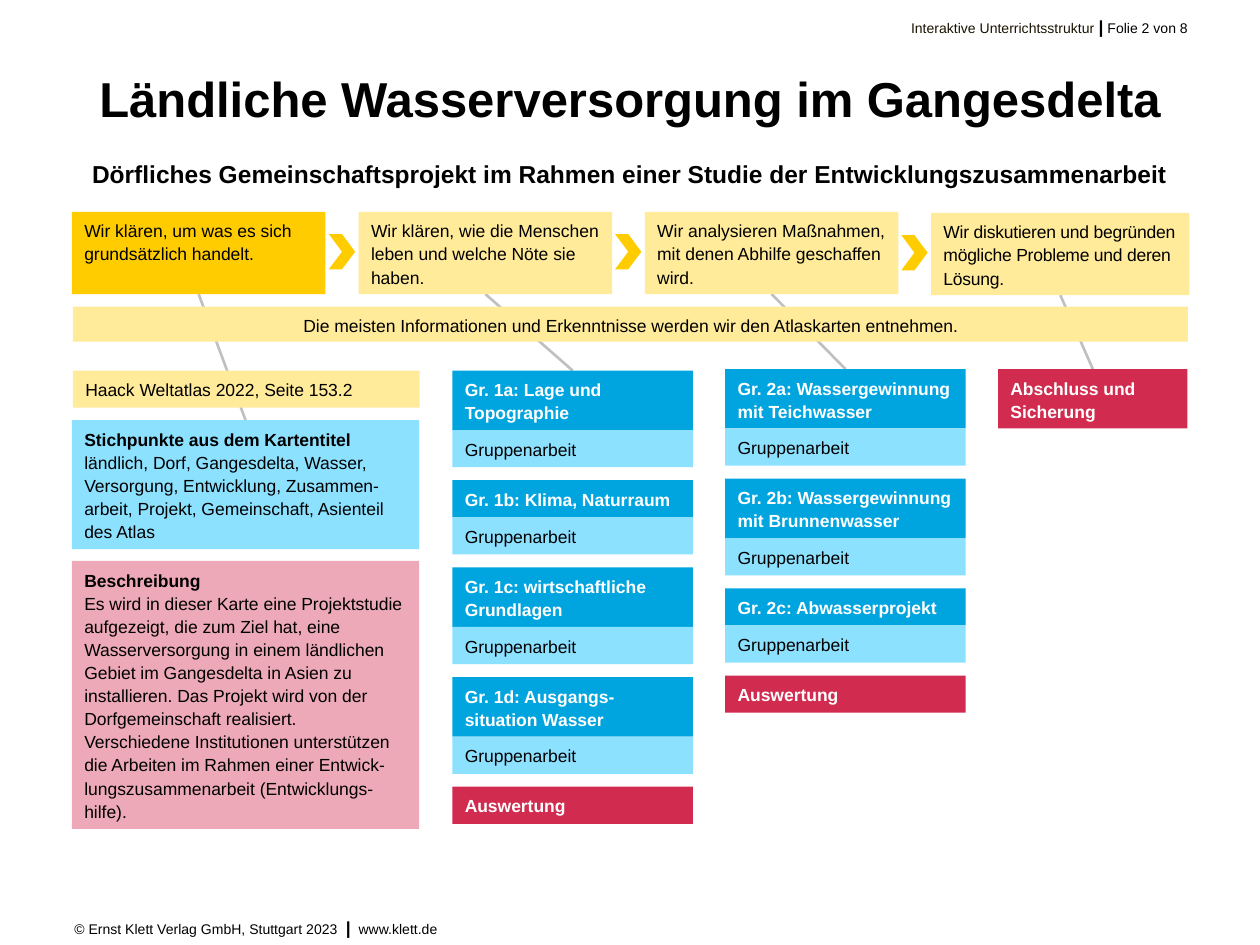
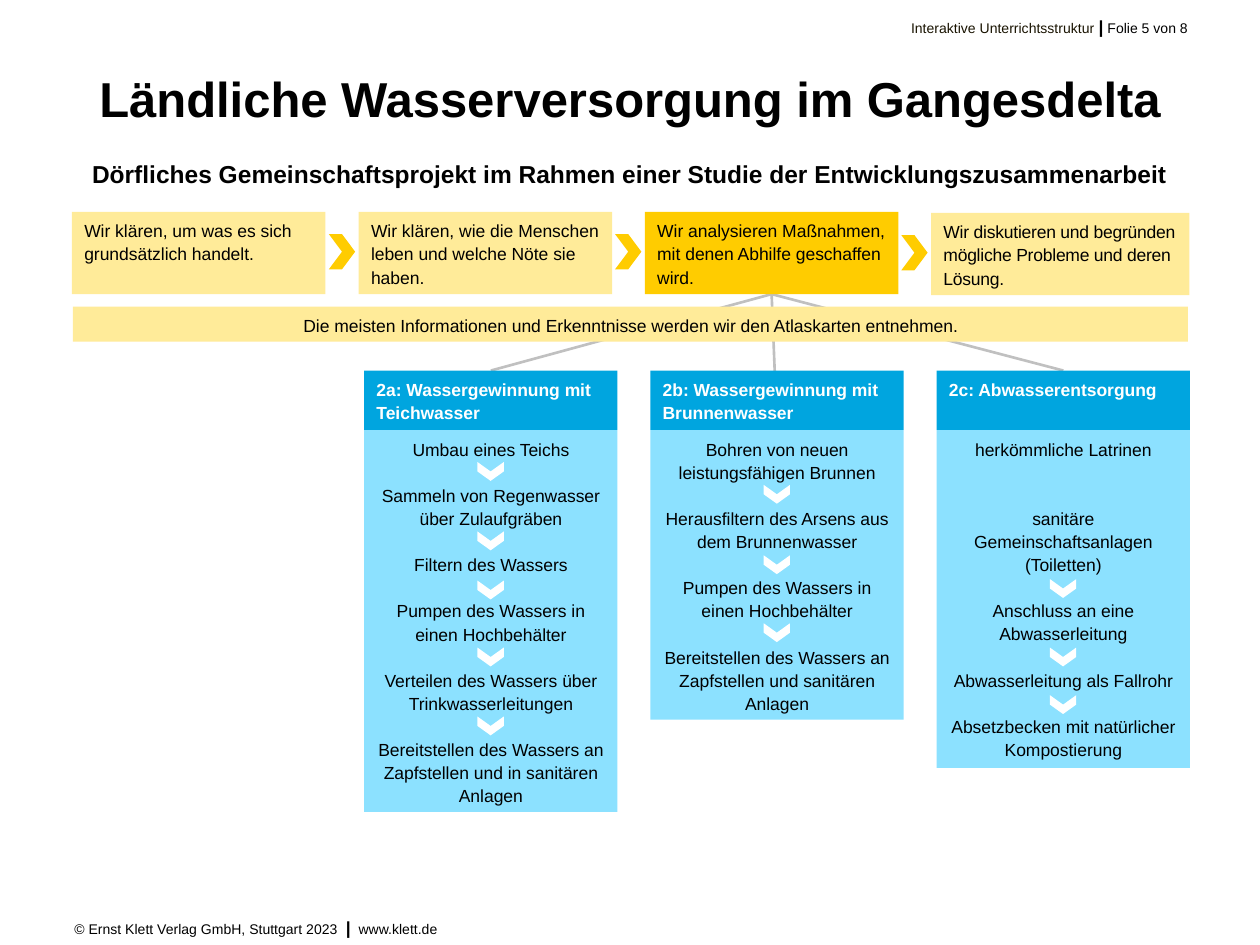
from pptx import Presentation
from pptx import util as u
from pptx.dml.color import RGBColor
from pptx.enum import shapes, text
from pptx.oxml.ns import qn
from lxml import etree

Cm, Pt = u.Cm, u.Pt
SH, AL, AN = shapes.MSO_SHAPE, text.PP_ALIGN, text.MSO_ANCHOR
YELLOW, CREAM, BLUE, SKY = "FFCC00", "FFEB99", "00A5DF", "8CE1FF"
RED, PINK, GREY, WHITE, BLACK = "D12B4F", "EDA9B8", "C0C0C0", "FFFFFF", "000000"
BOLD = {"bold": True}
HEAD = {"bold": True, "color": WHITE}
SMALL = {"size": Pt(8)}
BAR = {"size": Pt(10), "bold": True}
WIDE_SPACE = {"size": Pt(8), "spc": 220}
LINE = 13.2


def write(sp, paras, al=AL.LEFT, ls=1.1, ins=(0.25, 0.13), anchor=AN.TOP, gaps=()):
    tf = sp.text_frame
    frame = {"word_wrap": True, "auto_size": text.MSO_AUTO_SIZE.NONE, "vertical_anchor": anchor,
             "margin_left": Cm(ins[0]), "margin_right": Cm(ins[0]),
             "margin_top": Cm(ins[1]), "margin_bottom": Cm(ins[1])}
    for key, value in frame.items():
        setattr(tf, key, value)
    for i, runs in enumerate(paras):
        p = tf.add_paragraph() if i else tf.paragraphs[0]
        pPr = p._p.get_or_add_pPr()
        pPr.set("marL", "0")
        pPr.set("indent", "0")
        etree.SubElement(pPr, qn("a:buNone"))
        p.alignment, p.line_spacing = al, ls
        p.space_before = Pt(gaps[i] * LINE if gaps else 0)
        for words, fmt in runs:
            r = p.add_run()
            r.text = words
            fmt = {"name": "Arial", "size": Pt(10), "bold": False, "color": BLACK, **fmt}
            r.font.color.rgb = RGBColor.from_string(fmt.pop("color"))
            if "spc" in fmt:
                r._r.get_or_add_rPr().set("spc", str(fmt.pop("spc")))
            for key, value in fmt.items():
                setattr(r.font, key, value)


def box(s, x, y, w, h, fill, paras=(), kind=SH.RECTANGLE, **layout):
    sp = s.shapes.add_shape(kind, Cm(x), Cm(y), Cm(w), Cm(h))
    sp.shadow.inherit = False
    sp.fill.solid()
    sp.fill.fore_color.rgb = RGBColor.from_string(fill)
    sp.line.fill.background()
    if paras:
        write(sp, paras, **layout)
    return sp


prs = Presentation()
prs.slide_width, prs.slide_height = Cm(25.4), Cm(19.05)

steps = [
    ("Wir klären, um was es sich grundsätzlich handelt.", 1.45, 4.27, 5.11, {}),
    ("Wir klären, wie die Menschen leben und welche Nöte sie haben.", 7.23, 4.27, 5.11, {}),
    ("Wir analysieren Maßnahmen, mit denen Abhilfe geschaffen wird.", 13, 4.27, 5.11, {}),
    ("Wir diskutieren und begründen mögliche Probleme und deren Lösung.", 18.77, 4.29, 5.21,
     {"spc": -10}),
]

slides = []
for number, active in [(2, 0), (5, 2)]:
    s = prs.slides.add_slide(prs.slide_layouts[1])
    title, subtitle = s.shapes.title, s.placeholders[1]
    header = s.shapes.add_textbox(Cm(7.7), Cm(0.28), Cm(16.25), Cm(0.51))
    footer = s.shapes.add_textbox(Cm(1.5), Cm(18.44), Cm(19.25), Cm(0.51))
    write(header, [[("Interaktive Unterrichtsstruktur ", {"size": Pt(8), "color": "191300"}),
                    ("|", BAR), (f" Folie {number} von 8", SMALL)]],
          AL.RIGHT, 1.0, (0, 0), AN.MIDDLE)
    write(footer, [[("© Ernst Klett Verlag GmbH, Stuttgart 2023", SMALL), (" ", WIDE_SPACE),
                    ("|", BAR), (" ", WIDE_SPACE), ("www.klett.de", SMALL)]],
          AL.LEFT, 1.0, (0, 0), AN.MIDDLE)
    for sp, y, h in [(title, 1.52, 1.5), (subtitle, 3.02, 0.99)]:
        sp.left, sp.top, sp.width, sp.height = Cm(1.45), Cm(y), Cm(22.5), Cm(h)
    write(title, [[("Ländliche Wasserversorgung im Gangesdelta", {"size": Pt(28), "bold": True})]],
          AL.CENTER, 0.9, (0, 0))
    write(subtitle, [[("Dörfliches Gemeinschaftsprojekt im Rahmen einer Studie der "
                       "Entwicklungszusammenarbeit", {"size": Pt(14), "bold": True})]],
          AL.CENTER, 1.1, (0, 0.13))
    step_boxes = []
    for i, (words, x, y, w, fmt) in enumerate(steps):
        fill = YELLOW if i == active else CREAM
        step_boxes.append(box(s, x, y, w, 1.66, fill, [[(words, fmt)]]))
        if i:
            box(s, x - 0.6, y + 0.45, 0.53, 0.71, YELLOW, kind=SH.CHEVRON)
    box(s, 1.47, 6.18, 22.48, 0.71, CREAM,
        [[("Die meisten Informationen und Erkenntnisse werden wir den Atlaskarten entnehmen.", {})]],
        al=AL.CENTER)
    slides.append((s, step_boxes))

(overview, overview_steps), (measures, measure_steps) = slides
links = []

box(overview, 1.47, 7.47, 6.99, 0.75, CREAM, [[("Haack Weltatlas 2022, Seite 153.2", {})]])
keywords = box(overview, 1.45, 8.47, 7, 2.6, SKY, [
    [("Stichpunkte aus dem Kartentitel", BOLD)],
    [("ländlich, Dorf, Gangesdelta, Wasser, Versorgung, Entwicklung, Zusammen-arbeit, Projekt, "
      "Gemeinschaft, Asienteil des Atlas", {})]])
box(overview, 1.45, 11.31, 7, 5.4, PINK, [
    [("Beschreibung", BOLD)],
    [("Es wird in dieser Karte eine Projektstudie aufgezeigt, die zum Ziel hat, eine "
      "Wasserversorgung in einem ländlichen Gebiet im Gangesdelta in Asien zu installieren. "
      "Das Projekt wird von der Dorfgemeinschaft realisiert. Verschiedene Institutionen "
      "unterstützen die Arbeiten im Rahmen einer Entwick-lungszusammenarbeit "
      "(Entwicklungs-hilfe).", {})]])
links.append((overview, overview_steps[0], keywords))

group_columns = [
    (9.12, 7.47, [("Gr. 1a: Lage und Topographie", 1.2), ("Gr. 1b: Klima, Naturraum", 0.75),
                  ("Gr. 1c: wirtschaftliche Grundlagen", 1.2),
                  ("Gr. 1d: Ausgangs-situation Wasser", 1.2)]),
    (14.62, 7.44, [("Gr. 2a: Wassergewinnung mit Teichwasser", 1.2),
                   ("Gr. 2b: Wassergewinnung mit Brunnenwasser", 1.2),
                   ("Gr. 2c: Abwasserprojekt", 0.75)]),
]
for step, (x, y, groups) in zip(overview_steps[1:], group_columns):
    heads = []
    for words, h in groups:
        heads.append(box(overview, x, y, 4.85, h, BLUE, [[(words, HEAD)]]))
        box(overview, x, y + h, 4.85, 0.75, SKY, [[("Gruppenarbeit", {})]])
        y += h + 0.75 + 0.26
    box(overview, x, y, 4.85, 0.75, RED, [[("Auswertung", HEAD)]])
    links.append((overview, step, heads[0]))
closing = box(overview, 20.12, 7.44, 3.82, 1.2, RED, [[("Abschluss und Sicherung", HEAD)]])
links.append((overview, overview_steps[3], closing))

measure_columns = [
    ("2a: Wassergewinnung mit Teichwasser", 7.7,
     ["Umbau eines Teichs", "Sammeln von Regenwasser über Zulaufgräben", "Filtern des Wassers",
      "Pumpen des Wassers in einen Hochbehälter",
      "Verteilen des Wassers über Trinkwasserleitungen",
      "Bereitstellen des Wassers an Zapfstellen und in sanitären Anlagen"],
     [0, 1, 1, 1, 1, 1], [9.51, 10.91, 11.9, 13.25, 14.64]),
    ("2b: Wassergewinnung mit Brunnenwasser", 5.84,
     ["Bohren von neuen leistungsfähigen Brunnen",
      "Herausfiltern des Arsens aus dem Brunnenwasser",
      "Pumpen des Wassers in einen Hochbehälter",
      "Bereitstellen des Wassers an Zapfstellen und sanitären Anlagen"],
     [0, 1, 1, 1], [9.97, 11.39, 12.76]),
    ("2c: Abwasserentsorgung", 6.81,
     ["herkömmliche Latrinen", "sanitäre Gemeinschaftsanlagen (Toiletten)",
      "Anschluss an eine Abwasserleitung", "Abwasserleitung als Fallrohr",
      "Absetzbecken mit natürlicher Kompostierung"],
     [0, 2, 1, 1, 1], [11.87, 13.25, 14.21]),
]
for i, (name, h, stages, gaps, arrows) in enumerate(measure_columns):
    x = 7.34 + 5.77 * i
    body = box(measures, x, 8.67, 5.11, h, SKY, [[(stage, {})] for stage in stages],
               al=AL.CENTER, gaps=gaps)
    head = box(measures, x, 7.47, 5.11, 1.2, BLUE, [[(name, HEAD)]])
    for middle in arrows:
        arrow = box(measures, x + 2.55 - 0.19, middle - 0.27, 0.38, 0.53, WHITE, kind=SH.CHEVRON)
        arrow.rotation = 90
    links.append((measures, measure_steps[2], body if i == 1 else head))

for s, step, target in links:
    c = s.shapes.add_connector(shapes.MSO_CONNECTOR.STRAIGHT, 0, 0, 0, 0)
    c.begin_connect(step, 2)
    c.end_connect(target, 0)
    c.line.color.rgb = RGBColor.from_string(GREY)
    c.line.width = Pt(1.5)
    etree.SubElement(c._element.spPr, qn("a:effectLst"))
    s.shapes._spTree.insert(2, c._element)

prs.save("out.pptx")
